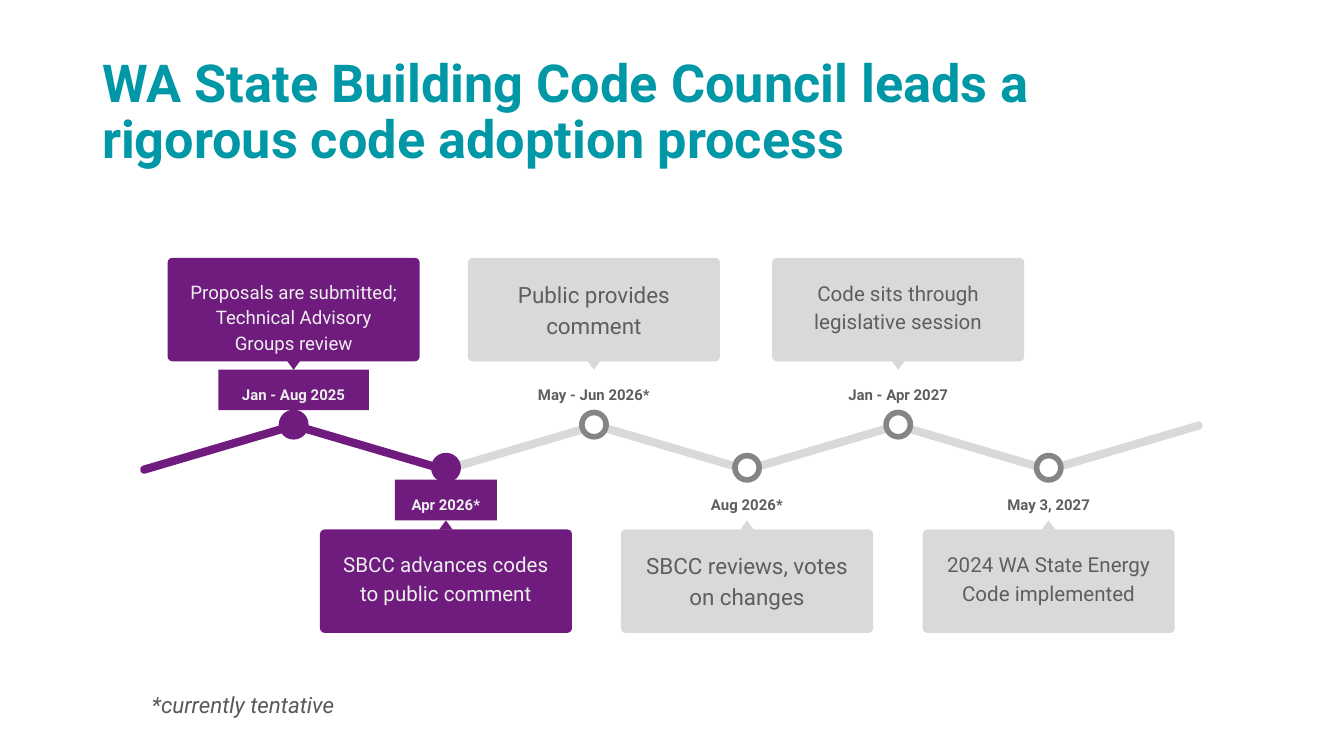
from pptx import Presentation
from pptx.dml.color import RGBColor
from pptx.enum.shapes import MSO_SHAPE
from pptx.enum.text import MSO_ANCHOR, PP_ALIGN
from pptx.util import Pt

RECT, ROUND = MSO_SHAPE.RECTANGLE, MSO_SHAPE.ROUNDED_RECTANGLE
OVAL, TRI = MSO_SHAPE.OVAL, MSO_SHAPE.ISOSCELES_TRIANGLE
TOP, MID = MSO_ANCHOR.TOP, MSO_ANCHOR.MIDDLE
LEFT, CENTER = PP_ALIGN.LEFT, PP_ALIGN.CENTER


class Theme:
    font = "Roboto"
    teal, purple, white = "0097A7", "701C7F", "FFFFFF"
    pale, gray, ring = "D9D9D9", "5E5E5E", "858585"
    light, note = "EEEEEE", "595959"
    title_size, date_size, note_size = 28, 8, 12


deck = Presentation()
deck.slide_width, deck.slide_height = Pt(720), Pt(405)
slide = deck.slides.add_slide(deck.slide_layouts[6])


def draw(kind, x, y, w, h, fill=None, line=None):
    shape = slide.shapes.add_shape(kind, Pt(x), Pt(y), Pt(w), Pt(h))
    shape.shadow.inherit = False
    if fill:
        shape.fill.solid()
        shape.fill.fore_color.rgb = RGBColor.from_string(fill)
    else:
        shape.fill.background()
    if line:
        shape.line.color.rgb = RGBColor.from_string(line)
        shape.line.width = Pt(3)
    else:
        shape.line.fill.background()
    return shape


def write(shape, text, size, color, align=CENTER, space=1.15, anchor=TOP,
          pad=(7.2, 7.2), **style):
    frame = shape.text_frame
    para = frame.paragraphs[0]
    para.text = text
    side, edge = Pt(pad[0]), Pt(pad[1])
    looks = {
        frame: {"word_wrap": True, "vertical_anchor": anchor,
                "margin_left": side, "margin_right": side,
                "margin_top": edge, "margin_bottom": edge},
        para: {"alignment": align, "line_spacing": space},
        para.runs[0].font: {"name": Theme.font, "size": Pt(size), **style},
    }
    for part, values in looks.items():
        for name, value in values.items():
            setattr(part, name, value)
    para.runs[0].font.color.rgb = RGBColor.from_string(color)


# Title
title = slide.shapes.add_textbox(Pt(49.7), Pt(21.6), Pt(587.5), Pt(78.5))
write(title, "WA State Building Code Council leads a rigorous code adoption process",
      Theme.title_size, Theme.teal, LEFT, 0.9, MID, (5, 3), bold=True)

# Zigzag line, last part at the back
for i in reversed(range(7)):
    bar = draw(ROUND, 73.4 + 80.8 * i, 237.6, 87.8, 4.4,
               Theme.purple if i < 2 else Theme.pale)
    bar.adjustments[0] = 0.5
    bar.rotation = 16.4 if i % 2 else -16.4

# Steps: center, date, date width, text, text size, done
steps = [
    (157.3, "Jan - Aug 2025", 80.6,
     "Proposals are submitted; Technical Advisory Groups review", 10, True),
    (238.9, "Apr 2026*", 54.7, "SBCC advances codes to public comment", 11, True),
    (318.2, "May - Jun 2026*", 85.7, "Public provides comment", 12, False),
    (400.2, "Aug 2026*", 66.2, "SBCC reviews, votes on changes", 12, False),
    (481.2, "Jan - Apr 2027", 85.7, "Code sits through legislative session", 11, False),
    (561.8, "May 3, 2027", 61.9, "2024 WA State Energy Code implemented", 11, False),
]
for i, (mid, date, wide, text, size, done) in enumerate(steps):
    # Even steps sit above the line, odd steps below it
    card_y, tip_y, date_y, dot_y = (
        (283.7, 278.8, 257, 244.1) if i % 2 else (138.2, 193.2, 198, 221))
    tone = Theme.purple if done else Theme.pale
    ink = Theme.light if done else Theme.gray
    back = Theme.purple if done else None

    card = draw(ROUND, mid - 67.5, card_y, 135, 55.4, tone)
    card.adjustments[0] = 0.045
    tip = draw(TRI, mid - 3.6, tip_y, 7.2, 4.9, tone)
    tip.rotation = 0 if i % 2 else 180
    body = draw(RECT, mid - 64, card_y + 3, 128, 49, back)
    write(body, text, size, ink)
    label = draw(RECT, mid - wide / 2, date_y, wide, 21.8, back)
    write(label, date, Theme.date_size, ink, bold=True)
    draw(OVAL, mid - 6.5, dot_y, 13, 13, back or Theme.white, back or Theme.ring)

# Footnote
foot = slide.shapes.add_textbox(Pt(74.2), Pt(362.9), Pt(607), Pt(28.8))
write(foot, "*currently tentative", Theme.note_size, Theme.note, LEFT, 1.0,
      italic=True)

deck.save("out.pptx")
